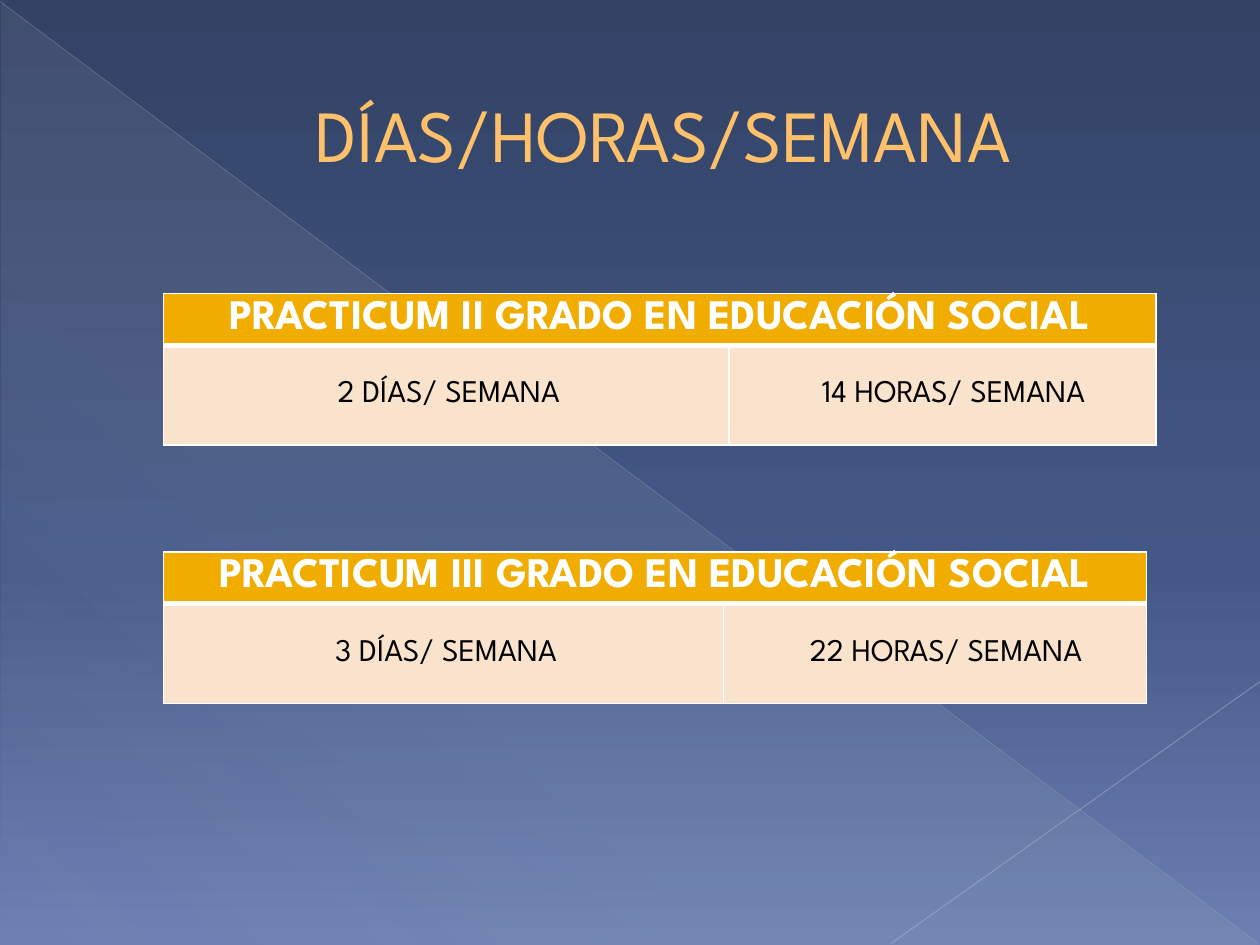
from dataclasses import dataclass

from lxml import etree
from pptx import Presentation
from pptx.dml.color import RGBColor
from pptx.enum.shapes import MSO_CONNECTOR, MSO_SHAPE
from pptx.enum.text import MSO_ANCHOR, PP_ALIGN
from pptx.oxml.ns import qn
from pptx.util import Cm, Pt

STRAIGHT = MSO_CONNECTOR.STRAIGHT
RIGHT_TRIANGLE = MSO_SHAPE.RIGHT_TRIANGLE
CENTER = PP_ALIGN.CENTER
MIDDLE = MSO_ANCHOR.MIDDLE
TITLE_ONLY = 5
FONT = "League Spartan"
WHITE = "FFFFFF"
CELL_MARGIN = 0.25


@dataclass(frozen=True)
class GradientStop:
    position: int
    color: str
    opacity: int = 100


@dataclass(frozen=True)
class Ray:
    start: tuple[float, float]
    end: tuple[float, float]
    color: str
    width: float
    opacity: int


@dataclass(frozen=True)
class Practicum:
    heading: str
    days: str
    hours: str
    top: float
    column_widths: tuple[float, float]


BACKGROUND = [GradientStop(0, "334265"), GradientStop(60, "445887"),
              GradientStop(100, "6C7FB1")]
TRIANGLE = [GradientStop(0, "D4D4D6", 10), GradientStop(70, "D4D4D6", 8),
            GradientStop(100, "D4D4D6", 1)]
RAYS = [
    Ray((0, 0.03), (25.37, 19.02), "B9BDC8", 0.39, 35),
    Ray((25.4, 13.74), (17.96, 19.02), "C1C4CE", 0.47, 45),
]
PRACTICUMS = [
    Practicum("PRACTICUM II GRADO EN EDUCACIÓN SOCIAL", "2 DÍAS/ SEMANA",
              "14 HORAS/ SEMANA", 5.92, (11.4, 8.6)),
    Practicum("PRACTICUM III GRADO EN EDUCACIÓN SOCIAL", "3 DÍAS/ SEMANA",
              "22 HORAS/ SEMANA", 11.13, (11.29, 8.52)),
]


def rgb(color: str) -> RGBColor:
    return RGBColor.from_string(color)


def add_color(parent, color: str, opacity: int = 100) -> None:
    """Append an a:srgbClr with its transparency."""
    node = etree.SubElement(parent, qn("a:srgbClr"), val=color)
    if opacity < 100:
        etree.SubElement(node, qn("a:alpha"), val=str(opacity * 1000))


def set_gradient(fill, owner, stops: list[GradientStop], angle: int) -> None:
    """Fill with any number of stops; the angle runs clockwise."""
    fill.gradient()
    gradient = next(owner.iter(qn("a:gradFill")))
    stop_list = gradient.find(qn("a:gsLst"))
    for old_stop in list(stop_list):
        stop_list.remove(old_stop)
    for stop in stops:
        node = etree.SubElement(stop_list, qn("a:gs"), pos=str(stop.position * 1000))
        add_color(node, stop.color, stop.opacity)
    gradient.find(qn("a:lin")).set("ang", str(angle * 60000))


def draw_triangle(slide) -> None:
    triangle = slide.shapes.add_shape(
        RIGHT_TRIANGLE, Cm(0.03), Cm(0.05), Cm(25.35), Cm(19))
    triangle.shadow.inherit = False
    triangle.line.fill.background()
    set_gradient(triangle.fill, triangle.element.spPr, TRIANGLE, 133)


def draw_ray(slide, ray: Ray) -> None:
    points = [Cm(value) for value in ray.start + ray.end]
    connector = slide.shapes.add_connector(STRAIGHT, *points)
    connector.line.width = Pt(ray.width)
    connector.line.color.rgb = rgb(ray.color)
    color_node = next(connector.element.spPr.iter(qn("a:srgbClr")))
    etree.SubElement(color_node, qn("a:alpha"), val=str(ray.opacity * 1000))
    etree.SubElement(connector.element.spPr, qn("a:effectLst"))


def write_text(frame, text: str, size: int, color: str, bold: bool = False) -> None:
    frame.text = text
    paragraph = frame.paragraphs[0]
    paragraph.alignment = CENTER
    font = paragraph.font
    font.name, font.size, font.bold = FONT, Pt(size), bold
    font.color.rgb = rgb(color)


def style_cell(cell, fill: str, top: float = 1, bottom: float = 1) -> None:
    """Set the fill and white borders, with top and bottom widths in points."""
    cell.fill.solid()
    cell.fill.fore_color.rgb = rgb(fill)
    properties = cell._tc.get_or_add_tcPr()
    widths = {"lnL": 1, "lnR": 1, "lnT": top, "lnB": bottom}
    for index, (side, width) in enumerate(widths.items()):
        border = etree.Element(qn(f"a:{side}"), w=str(Pt(width)))
        add_color(etree.SubElement(border, qn("a:solidFill")), WHITE)
        properties.insert(index, border)


def draw_practicum(slide, practicum: Practicum) -> None:
    row_heights = (1.04, 2.01)
    table = slide.shapes.add_table(
        2, 2, Cm(3.3), Cm(practicum.top),
        Cm(sum(practicum.column_widths)), Cm(sum(row_heights))).table
    for column, width in zip(table.columns, practicum.column_widths):
        column.width = Cm(width)
    for row, height in zip(table.rows, row_heights):
        row.height = Cm(height)

    heading = table.cell(0, 0)
    heading.merge(table.cell(0, 1))
    for column in range(2):
        style_cell(table.cell(0, column), "F0AD00", bottom=3)
    write_text(heading.text_frame, practicum.heading, 24, WHITE, bold=True)

    workload = ((practicum.days, 0.1), (practicum.hours, 0.45))
    for column, (amount, shift) in enumerate(workload):
        cell = table.cell(1, column)
        style_cell(cell, "F9E3CC", top=3)
        cell.vertical_anchor = MIDDLE
        cell.margin_left = Cm(CELL_MARGIN + shift)
        write_text(cell.text_frame, amount, 18, "000000")


def draw_title(slide) -> None:
    title = slide.shapes.title
    title.left, title.top = Cm(1.27), Cm(0.74)
    title.width, title.height = Cm(22.86), Cm(3.89)
    frame = title.text_frame
    frame.vertical_anchor = MIDDLE
    frame.margin_left = Cm(1.6)
    write_text(frame, "DÍAS/HORAS/SEMANA", 42, "FFC06A")


def main() -> None:
    presentation = Presentation()
    presentation.slide_width, presentation.slide_height = Cm(25.4), Cm(19.05)
    slide = presentation.slides.add_slide(presentation.slide_layouts[TITLE_ONLY])
    set_gradient(slide.background.fill, slide.element, BACKGROUND, 90)
    draw_triangle(slide)
    for ray in RAYS:
        draw_ray(slide, ray)
    draw_title(slide)
    for practicum in PRACTICUMS:
        draw_practicum(slide, practicum)
    presentation.save("out.pptx")


if __name__ == "__main__":
    main()
